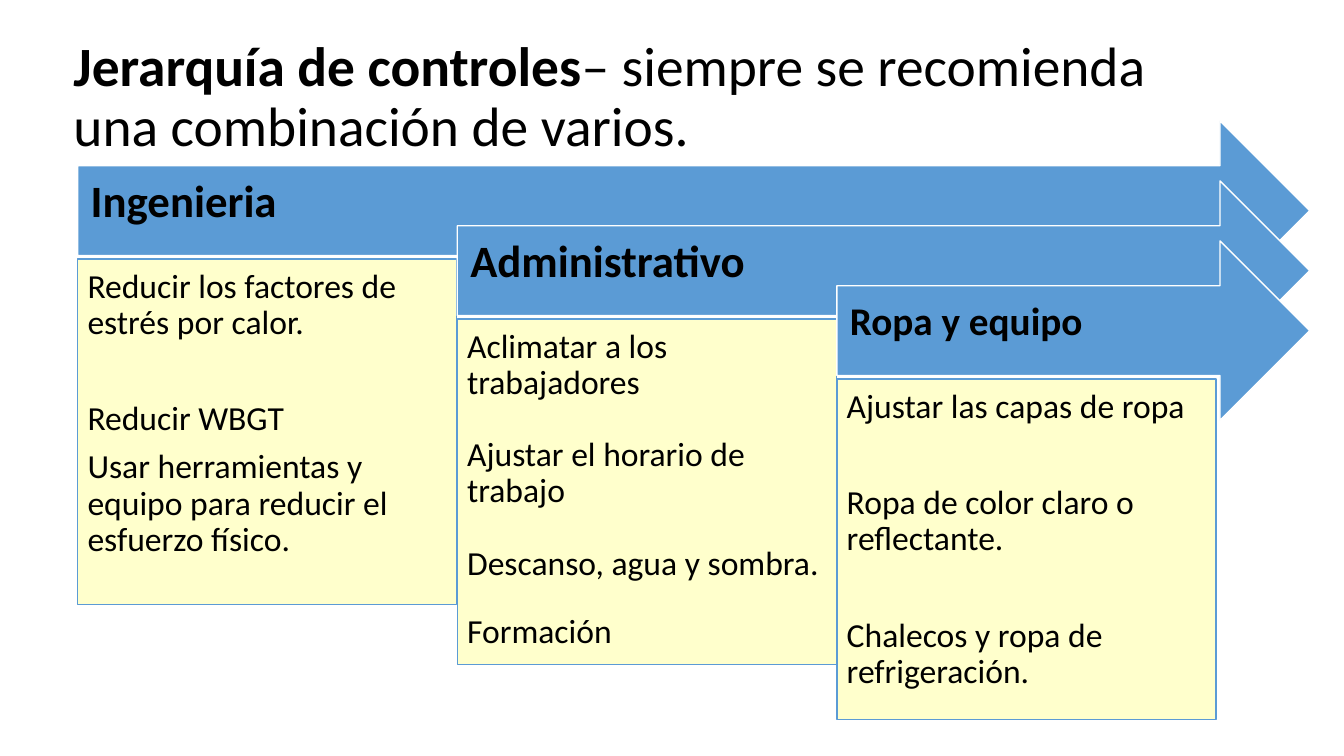
from pptx import Presentation
from pptx.dml.color import RGBColor
from pptx.enum.shapes import MSO_SHAPE
from pptx.enum.text import MSO_ANCHOR, PP_ALIGN
from pptx.util import Inches, Pt

BLACK = RGBColor(0x00, 0x00, 0x00)
WHITE = RGBColor(0xFF, 0xFF, 0xFF)
BLUE = RGBColor(0x5B, 0x9B, 0xD5)
CREAM = RGBColor(0xFF, 0xFF, 0xCC)

FONT = "Calibri"
LEFT, TOP = 0.77, 1.2
STEP_X, STEP_Y = 3.765, 0.595
ARROW_RIGHT, ARROW_H = 12.99, 1.78
BOX_DROP, BOX_W = 1.37, 3.76

STAGES = [
    ("Ingenieria", 32, 3.43, [
        ("Reducir los factores de estrés por calor.", 43),
        ("Reducir WBGT", 8.4),
        ("Usar herramientas y equipo para reducir el esfuerzo físico.", 0),
    ]),
    ("Administrativo", 32, 3.43, [
        ("Aclimatar a los trabajadores", 25.7),
        ("Ajustar el horario de trabajo", 25.7),
        ("Descanso, agua y sombra.", 23),
        ("Formación", 0),
    ]),
    ("Ropa y equipo", 28, 3.38, [
        ("Ajustar las capas de ropa", 43),
        ("Ropa de color claro o reflectante.", 43),
        ("Chalecos y ropa de refrigeración.", 0),
    ]),
]


def format_run(r, size, bold=False):
    r.font.name = FONT
    r.font.size = Pt(size)
    r.font.bold = bold
    r.font.color.rgb = BLACK


def format_paragraph(p, size, bold=False, after=0):
    p.alignment = PP_ALIGN.LEFT
    p.line_spacing = 0.9
    p.space_after = Pt(after)
    for r in p.runs:
        format_run(r, size, bold)


def set_frame(tf, anchor, near, far):
    tf.word_wrap = True
    tf.vertical_anchor = anchor
    tf.margin_left = tf.margin_top = Inches(near)
    tf.margin_right = tf.margin_bottom = Inches(far)


def add_panel(s, kind, x, y, w, h, fill, line):
    sp = s.shapes.add_shape(kind, Inches(x), Inches(y), Inches(w), Inches(h))
    sp.shadow.inherit = False
    sp.fill.solid()
    sp.fill.fore_color.rgb = fill
    sp.line.color.rgb = line
    sp.line.width = Pt(1)
    return sp


def add_title(s):
    tb = s.shapes.add_textbox(Inches(0.63), Inches(0.48), Inches(11.5), Inches(0.99))
    tf = tb.text_frame
    tf.word_wrap = True
    tf.vertical_anchor = MSO_ANCHOR.MIDDLE
    p = tf.paragraphs[0]
    p.text = "Jerarquía de controles"
    p.add_run().text = "– siempre se recomienda una combinación de varios."
    format_paragraph(p, 39.6)
    p.runs[0].font.bold = True


def add_arrow(s, x, y, label, size):
    sp = add_panel(s, MSO_SHAPE.RIGHT_ARROW, x, y, ARROW_RIGHT - x, ARROW_H, BLUE, WHITE)
    tf = sp.text_frame
    set_frame(tf, MSO_ANCHOR.MIDDLE, 0.13, 0.28)
    tf.text = label
    format_paragraph(tf.paragraphs[0], size, bold=True)


def add_measures(s, x, y, h, measures):
    sp = add_panel(s, MSO_SHAPE.RECTANGLE, x, y, BOX_W, h, CREAM, BLUE)
    tf = sp.text_frame
    set_frame(tf, MSO_ANCHOR.TOP, 0.1, 0.1)
    tf.text = "\n".join(text for text, _ in measures)
    for p, (_, after) in zip(tf.paragraphs, measures):
        format_paragraph(p, 24, after=after)


def main():
    prs = Presentation()
    prs.slide_width = Inches(13.33)
    prs.slide_height = Inches(7.5)
    s = prs.slides.add_slide(prs.slide_layouts[6])
    add_title(s)
    for i, (label, size, box_h, measures) in enumerate(STAGES):
        x, y = LEFT + i * STEP_X, TOP + i * STEP_Y
        add_arrow(s, x, y, label, size)
        add_measures(s, x, y + BOX_DROP, box_h, measures)
    prs.save("out.pptx")


if __name__ == "__main__":
    main()
